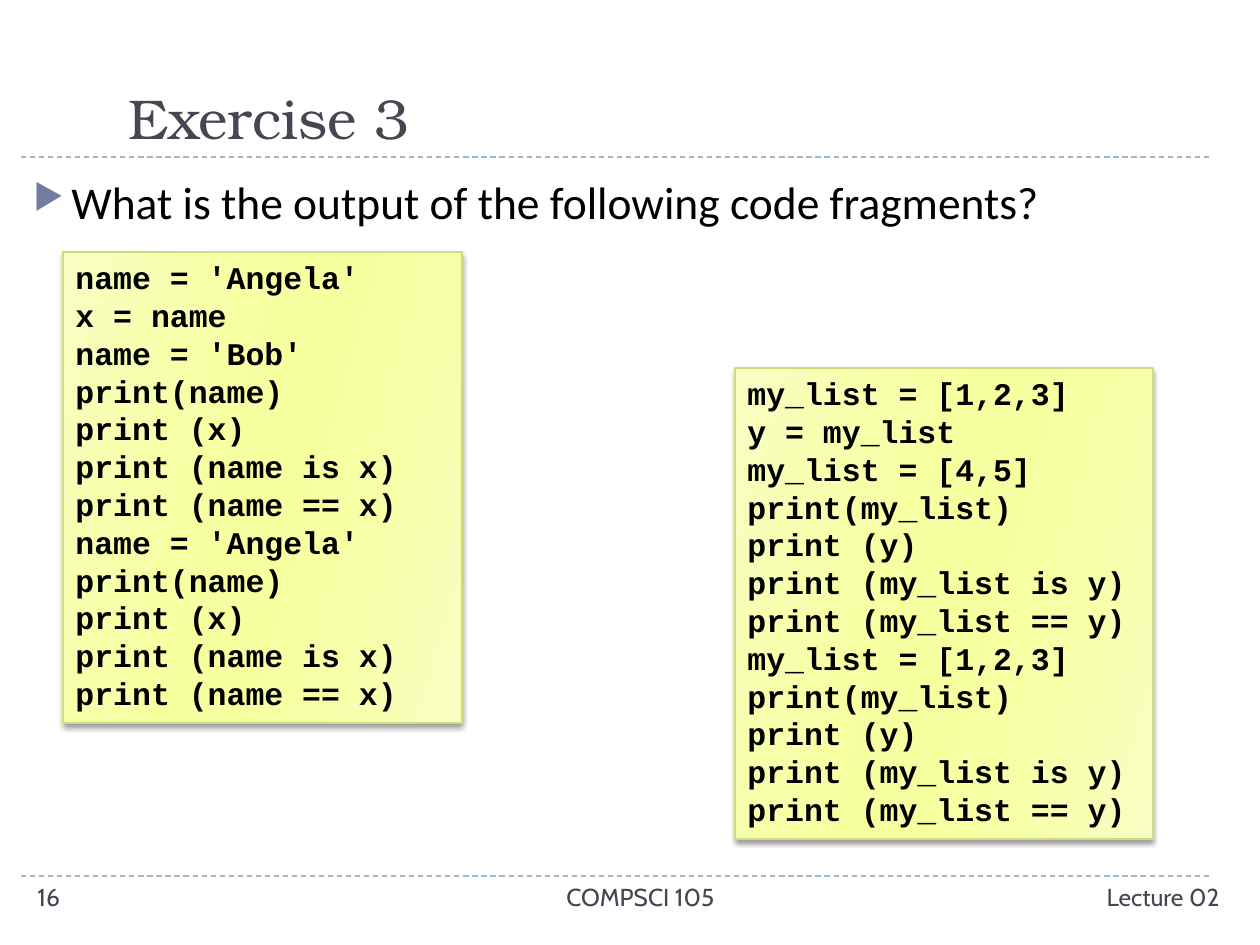
from lxml import etree
from pptx import Presentation
from pptx.dml.color import RGBColor
from pptx.enum.dml import MSO_LINE_DASH_STYLE as DASH
from pptx.enum.shapes import MSO_CONNECTOR as CONNECTOR, MSO_SHAPE as SHAPE
from pptx.enum.text import MSO_ANCHOR as ANCHOR, MSO_AUTO_SIZE as AUTO_SIZE, PP_ALIGN as ALIGN
from pptx.oxml.ns import qn
from pptx.util import Emu, Pt

PX_PER_INCH = 126
BLACK = RGBColor(0x00, 0x00, 0x00)
SLATE = RGBColor(0x46, 0x46, 0x53)
BULLET_BLUE = RGBColor(0x72, 0x7C, 0xA3)
RULE_BLUE = RGBColor(0x9F, 0xB8, 0xCD)
OLIVE = RGBColor(0xD2, 0xDA, 0x7A)
PALE_LIME = RGBColor(0xF8, 0xFE, 0xC2)
SOFT_LIME = RGBColor(0xF6, 0xFF, 0xA7)
LIME = RGBColor(0xF6, 0xFF, 0x9F)
LIME_STOPS = [(0, PALE_LIME), (30, SOFT_LIME), (45, LIME),
              (55, LIME), (73, SOFT_LIME), (100, PALE_LIME)]

NAME_SETUP = ["name = 'Angela'", "x = name", "name = 'Bob'"]
NAME_PRINTS = ["print(name)", "print (x)", "print (name is x)", "print (name == x)"]
NAME_CODE = NAME_SETUP + NAME_PRINTS + NAME_SETUP[:1] + NAME_PRINTS
LIST_SETUP = ["my_list = [1,2,3]", "y = my_list", "my_list = [4,5]"]
LIST_PRINTS = ["print(my_list)", "print (y)", "print (my_list is y)", "print (my_list == y)"]
LIST_CODE = LIST_SETUP + LIST_PRINTS + LIST_SETUP[:1] + LIST_PRINTS


def px(length):
    return Emu(round(length * 914400 / PX_PER_INCH))


def add_xml(parent, tag, **attributes):
    element = etree.SubElement(parent, qn(tag))
    for name, value in attributes.items():
        element.set(name, str(value))
    return element


def style_font(paragraph, name, size, color, bold=False):
    font = paragraph.font
    font.name, font.size, font.bold = name, Pt(size), bold
    font.color.rgb = color


def add_text(slide, text, box, font_name, size, color, align=ALIGN.LEFT, anchor=ANCHOR.TOP):
    frame = slide.shapes.add_textbox(*map(px, box)).text_frame
    frame.word_wrap = True
    frame.vertical_anchor = anchor
    paragraph = frame.paragraphs[0]
    paragraph.text = text
    paragraph.alignment = align
    style_font(paragraph, font_name, size, color)
    return paragraph


def add_bullet(paragraph, indent):
    properties = paragraph._p.get_or_add_pPr()
    properties.set("marL", str(px(indent)))
    properties.set("indent", str(-px(indent)))
    bullet_color = etree.Element(qn("a:buClr"))
    add_xml(bullet_color, "a:srgbClr", val=BULLET_BLUE)
    bullet_size = etree.Element(qn("a:buSzPct"), val="76000")
    bullet_char = etree.Element(qn("a:buChar"), char="▶")
    for position, element in enumerate([bullet_color, bullet_size, bullet_char]):
        properties.insert(position, element)


def add_rule(slide, y):
    rule = slide.shapes.add_connector(CONNECTOR.STRAIGHT, px(21), px(y), px(1212), px(y))
    rule.line.color.rgb = RULE_BLUE
    rule.line.width = Pt(0.75)
    rule.line.dash_style = DASH.DASH
    add_xml(rule._element.spPr, "a:effectLst")


def fill_lime(shape):
    """Give the shape a six-stop gradient that runs clockwise by 16 degrees."""
    shape.fill.gradient()
    gradient = shape._element.spPr.find(qn("a:gradFill"))
    stops = gradient.find(qn("a:gsLst"))
    for stop in list(stops):
        stops.remove(stop)
    for percent, color in LIME_STOPS:
        add_xml(add_xml(stops, "a:gs", pos=percent * 1000), "a:srgbClr", val=color)
    gradient.find(qn("a:lin")).set("ang", str(16 * 60000))


def add_soft_shadow(shape):
    shape.shadow.inherit = False
    effects = shape._element.spPr.find(qn("a:effectLst"))
    shadow = add_xml(effects, "a:outerShdw", blurRad=Pt(3), dist=Pt(2),
                     dir=90 * 60000, rotWithShape=0)
    add_xml(add_xml(shadow, "a:srgbClr", val=BLACK), "a:alpha", val=40000)


def add_code(slide, lines, box):
    shape = slide.shapes.add_shape(SHAPE.RECTANGLE, *map(px, box))
    fill_lime(shape)
    shape.line.color.rgb = OLIVE
    shape.line.width = Pt(0.75)
    add_soft_shadow(shape)
    frame = shape.text_frame
    frame.word_wrap = True
    frame.auto_size = AUTO_SIZE.SHAPE_TO_FIT_TEXT
    frame.vertical_anchor = ANCHOR.TOP
    frame.text = "\n".join(lines)
    for paragraph in frame.paragraphs:
        paragraph.alignment = ALIGN.LEFT
        style_font(paragraph, "Courier New", 18, BLACK, bold=True)


def main():
    presentation = Presentation()
    presentation.slide_width, presentation.slide_height = px(1260), px(945)
    slide = presentation.slides.add_slide(presentation.slide_layouts[6])

    for y in (876, 157):
        add_rule(slide, y)
    add_text(slide, "Exercise 3", (116, 21, 1110, 136), "TeX Gyre Bonum", 32, SLATE,
             anchor=ANCHOR.BOTTOM)
    question = add_text(slide, "What is the output of the following code fragments?",
                        (21, 168, 1207, 703), "Calibri", 26, BLACK)
    add_bullet(question, 38)

    for text, left, width, align in [("Lecture 02", 917, 315, ALIGN.RIGHT),
                                     ("COMPSCI 105", 399, 483, ALIGN.CENTER),
                                     ("16", 25, 273, ALIGN.LEFT)]:
        add_text(slide, text, (left, 876, width, 50), "Cabin", 14, SLATE, align)

    add_code(slide, NAME_CODE, (63, 252, 399, 471))
    add_code(slide, LIST_CODE, (735, 368, 418, 471))
    presentation.save("out.pptx")


if __name__ == "__main__":
    main()
